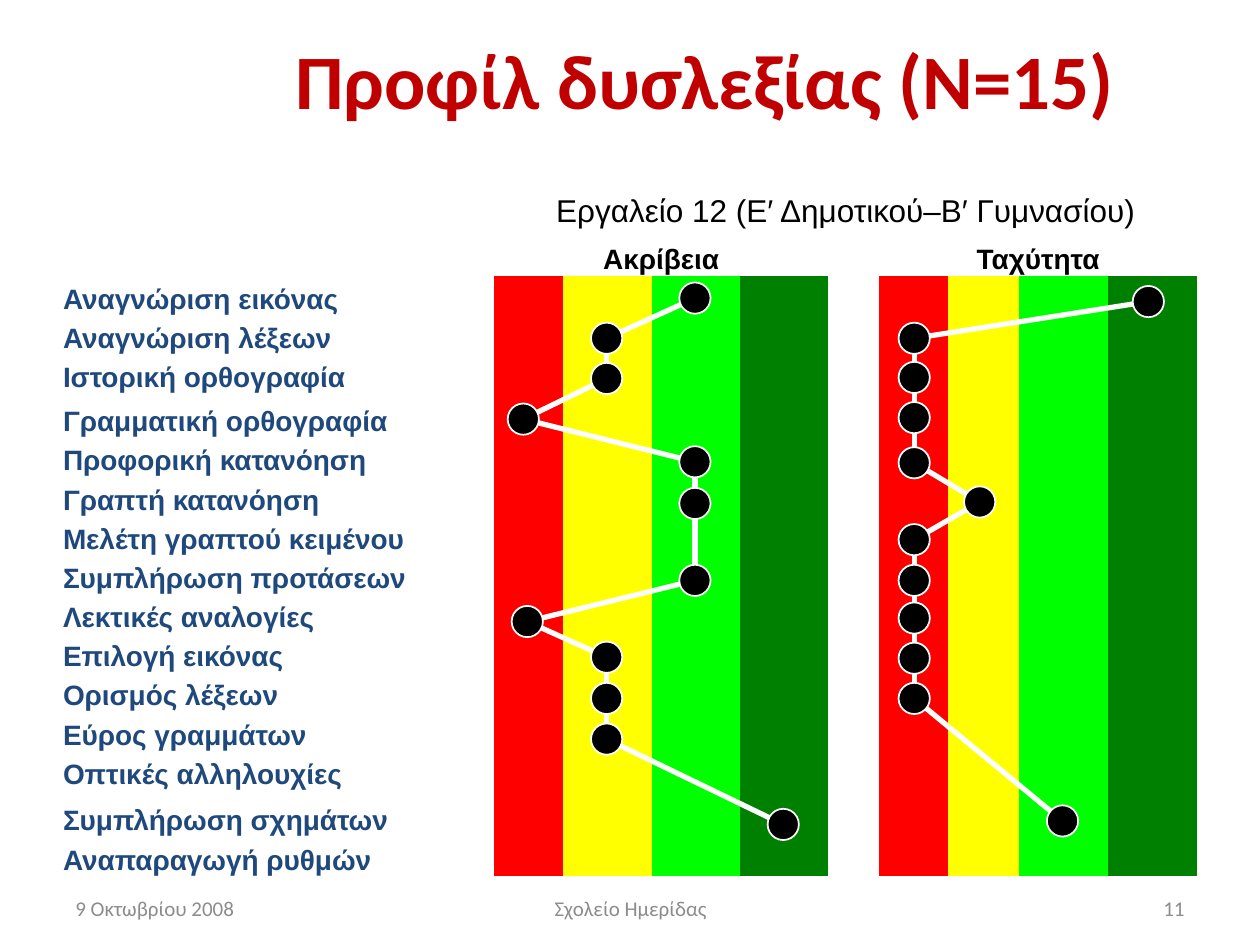
from itertools import pairwise

from lxml import etree
from pptx import Presentation
from pptx.dml import color
from pptx.enum import shapes, text
from pptx.oxml import ns
from pptx.util import Cm, Pt

TITLE = "Προφίλ δυσλεξίας (Ν=15)"
TOOL = "Εργαλείο 12 (Ε′ Δημοτικού–Β′ Γυμνασίου)"
SKILLS = [
    "Αναγνώριση εικόνας", "Αναγνώριση λέξεων", "Ιστορική ορθογραφία",
    "Γραμματική ορθογραφία", "Προφορική κατανόηση", "Γραπτή κατανόηση",
    "Μελέτη γραπτού κειμένου", "Συμπλήρωση προτάσεων", "Λεκτικές αναλογίες",
    "Επιλογή εικόνας", "Ορισμός λέξεων", "Εύρος γραμμάτων",
    "Οπτικές αλληλουχίες", "Συμπλήρωση σχημάτων", "Αναπαραγωγή ρυθμών",
]
BANDS = ["FF0000", "FFFF00", "00FF00", "008000"]
MEASURES = {"Ακρίβεια": 1, "Ταχύτητα": 6}  # heading: first column

# Dot centres in cm; "stops" are the dots where one line ends and the next begins.
PROFILES = [
    {"dots": [(23.15, 6.08), (18.43, 6.82), (18.43, 7.61), (18.43, 8.42),
              (18.43, 9.33), (19.75, 10.12), (18.43, 10.88), (18.43, 11.7),
              (18.43, 12.46), (18.43, 13.27), (18.43, 14.08), (21.42, 16.55)],
     "stops": [0, 1, 4, 5, 6, 10, 11]},
    {"dots": [(14.01, 6.01), (12.23, 6.82), (12.23, 7.63), (10.55, 8.45),
              (14.01, 9.31), (14.01, 10.15), (14.01, 11.7), (10.63, 12.53),
              (12.23, 13.25), (12.23, 14.08), (12.23, 14.9), (15.79, 16.62)],
     "stops": [0, 1, 2, 3, 4, 6, 7, 8, 10, 11]},
]
DOT = 0.63

COLUMNS = [8.69, 1.4, 1.78, 1.78, 1.78, 1.02, 1.4, 1.42, 1.8, 1.8]
ROW, TOOL_ROW = 0.79, 1.04
TALL_ROWS = {5: 0.89, 15: 0.94}
NO_GRID_STYLE = "{2D5ABB26-0587-4C30-8999-92F81FD0307C}"

LEFT, CENTER, RIGHT = (text.PP_ALIGN.LEFT, text.PP_ALIGN.CENTER, text.PP_ALIGN.RIGHT)
TITLE_FONT = {"name": "Calibri", "size": Pt(44), "bold": True, "color": "C00000"}
TOOL_FONT = {"name": "Arial", "size": Pt(18), "bold": False, "color": "000000"}
HEADING_FONT = {"name": "Arial", "size": Pt(16), "bold": True, "color": "000000"}
SKILL_FONT = {**HEADING_FONT, "color": "1F497D"}
FOOTER_FONT = {"name": "Calibri", "size": Pt(12), "bold": False, "color": "8C8C8C"}

TEXT_BOXES = [
    (TITLE, (4.5, 0, 19.43, 3.18), CENTER, TITLE_FONT),
    ("9 Οκτωβρίου 2008", (1.27, 17.93, 5.92, 0.74), LEFT, FOOTER_FONT),
    ("Σχολείο Ημερίδας", (8.69, 17.93, 8.05, 0.74), CENTER, FOOTER_FONT),
    ("11", (18.21, 17.93, 5.92, 0.74), RIGHT, FOOTER_FONT),
]


def rgb(value):
    return color.RGBColor.from_string(value)


def write(frame, content, alignment, font):
    paragraph = frame.paragraphs[0]
    paragraph.alignment = alignment
    run = paragraph.add_run()
    run.text = content
    for key, value in font.items():
        if key == "color":
            run.font.color.rgb = rgb(value)
        else:
            setattr(run.font, key, value)


def add_text_box(slide, content, box, alignment, font):
    frame = slide.shapes.add_textbox(*map(Cm, box)).text_frame
    frame.word_wrap = True
    frame.vertical_anchor = text.MSO_ANCHOR.MIDDLE
    write(frame, content, alignment, font)


def prepare_cell(cell):
    """Remove the margins and the fill, and set text at the bottom."""
    for side in ("left", "right", "top", "bottom"):
        setattr(cell, f"margin_{side}", 0)
    cell.vertical_anchor = text.MSO_ANCHOR.BOTTOM
    cell.fill.background()


def add_score_table(slide):
    heights = [TOOL_ROW] + [TALL_ROWS.get(row, ROW) for row in range(1, len(SKILLS) + 2)]
    graphic = slide.shapes.add_table(
        len(heights), len(COLUMNS), Cm(1.27), Cm(3.73), Cm(sum(COLUMNS)), Cm(sum(heights)))
    table = graphic.table
    table.first_row = table.horz_banding = False
    next(table._tbl.iter(ns.qn("a:tableStyleId"))).text = NO_GRID_STYLE
    for column, width in zip(table.columns, COLUMNS):
        column.width = Cm(width)
    for row, height in zip(table.rows, heights):
        row.height = Cm(height)
    for cell in table.iter_cells():
        prepare_cell(cell)

    tool = table.cell(0, 1)
    tool.merge(table.cell(0, len(COLUMNS) - 1))
    tool.margin_top = tool.margin_bottom = Cm(0.15)
    write(tool.text_frame, TOOL, CENTER, TOOL_FONT)
    for heading, first in MEASURES.items():
        cell = table.cell(1, first)
        cell.merge(table.cell(1, first + len(BANDS) - 1))
        write(cell.text_frame, heading, CENTER, HEADING_FONT)
    for row, skill in enumerate(SKILLS, start=2):
        write(table.cell(row, 0).text_frame, skill, LEFT, SKILL_FONT)
        for first in MEASURES.values():
            for column, band in enumerate(BANDS, start=first):
                fill = table.cell(row, column).fill
                fill.solid()
                fill.fore_color.rgb = rgb(band)


def set_line(line, width):
    line.color.rgb = rgb("FFFFFF")
    line.width = Pt(width)


def add_profile_lines(slide, dots, stops):
    group = slide.shapes.add_group_shape()
    for start, end in pairwise(stops):
        connector = group.shapes.add_connector(
            shapes.MSO_CONNECTOR.STRAIGHT, *map(Cm, dots[start] + dots[end]))
        set_line(connector.line, 3)
        etree.SubElement(connector._element.spPr, ns.qn("a:effectLst"))


def add_profile_dots(slide, dots):
    group = slide.shapes.add_group_shape()
    for x, y in dots:
        dot = group.shapes.add_shape(
            shapes.MSO_SHAPE.OVAL, Cm(x - DOT / 2), Cm(y - DOT / 2), Cm(DOT), Cm(DOT))
        dot.shadow.inherit = False
        dot.fill.solid()
        dot.fill.fore_color.rgb = rgb("000000")
        set_line(dot.line, 1)


def main():
    presentation = Presentation()
    presentation.slide_width, presentation.slide_height = Cm(25.4), Cm(19.05)
    slide = presentation.slides.add_slide(presentation.slide_layouts[6])
    add_score_table(slide)
    for text_box in TEXT_BOXES:
        add_text_box(slide, *text_box)
    for profile in PROFILES:
        add_profile_lines(slide, **profile)
    for profile in PROFILES:
        add_profile_dots(slide, profile["dots"])
    presentation.save("out.pptx")


if __name__ == "__main__":
    main()
